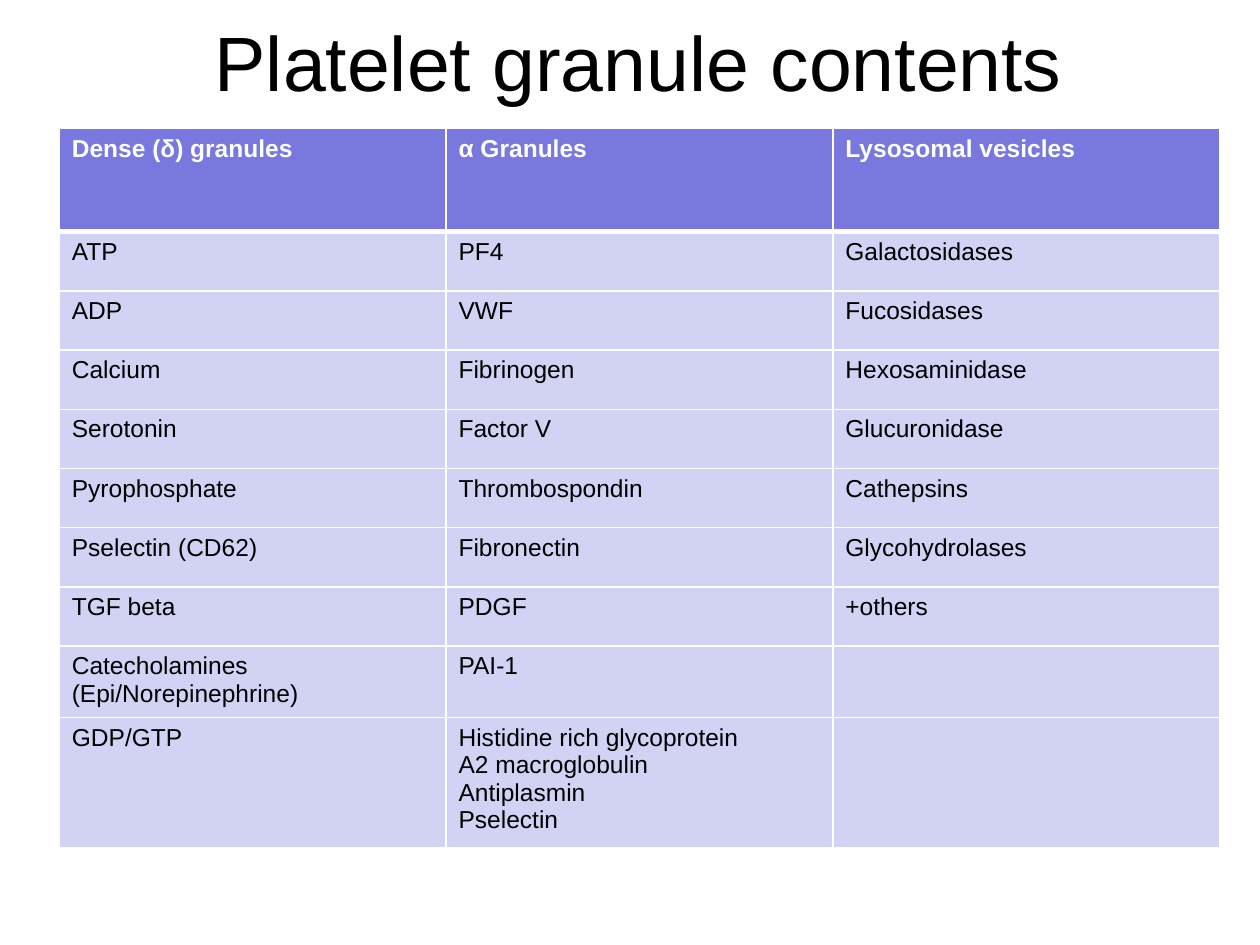
from dataclasses import dataclass

from lxml import etree
from pptx import Presentation
from pptx import util as u
from pptx.dml.color import RGBColor
from pptx.enum import text
from pptx.oxml import ns


@dataclass(frozen=True)
class Theme:
    font: str = "Arial"
    title_size: int = 44
    table_size: int = 14
    ink: str = "000000"
    white: str = "FFFFFF"
    header_fill: str = "7878DE"
    body_fill: str = "D2D2F4"
    thin: int = 1
    thick: int = 3


HEADERS = ["Dense (δ) granules", "α Granules", "Lysosomal vesicles"]
CONTENTS = [
    ["ATP", "PF4", "Galactosidases"],
    ["ADP", "VWF", "Fucosidases"],
    ["Calcium", "Fibrinogen", "Hexosaminidase"],
    ["Serotonin", "Factor V", "Glucuronidase"],
    ["Pyrophosphate", "Thrombospondin", "Cathepsins"],
    ["Pselectin (CD62)", "Fibronectin", "Glycohydrolases"],
    ["TGF beta", "PDGF", "+others"],
    ["Catecholamines (Epi/Norepinephrine)", "PAI-1", ""],
    ["GDP/GTP",
     "Histidine rich glycoprotein\nΑ2 macroglobulin\nAntiplasmin\nPselectin", ""],
]


class SlideBuilder:
    def __init__(self, slide, theme):
        self.slide = slide
        self.theme = theme

    def add_lines(self, frame, content, size, color, bold=False, align=None):
        """Fill a text frame, one paragraph for each line of content."""
        for index, line in enumerate(content.split("\n")):
            paragraph = frame.add_paragraph() if index else frame.paragraphs[0]
            paragraph.alignment = align
            paragraph.font.size = u.Pt(size)
            if not line:
                continue
            run = paragraph.add_run()
            run.text = line
            run.font.name = self.theme.font
            run.font.size = u.Pt(size)
            run.font.bold = bold
            run.font.color.rgb = RGBColor.from_string(color)

    def title(self, content, left, top, width, height):
        box = self.slide.shapes.add_textbox(
            u.Inches(left), u.Inches(top), u.Inches(width), u.Inches(height))
        frame = box.text_frame
        frame.word_wrap = True
        frame.vertical_anchor = text.MSO_ANCHOR.MIDDLE
        self.add_lines(frame, content, self.theme.title_size, self.theme.ink,
                       align=text.PP_ALIGN.CENTER)

    def borders(self, cell, top, bottom):
        """Draw white cell borders; they must precede the fill in the XML."""
        properties = cell._tc.get_or_add_tcPr()
        widths = {"lnL": self.theme.thin, "lnR": self.theme.thin,
                  "lnT": top, "lnB": bottom}
        for position, (side, width) in enumerate(widths.items()):
            line = etree.Element(ns.qn(f"a:{side}"), w=str(u.Pt(width)))
            fill = etree.SubElement(line, ns.qn("a:solidFill"))
            etree.SubElement(fill, ns.qn("a:srgbClr"), val=self.theme.white)
            properties.insert(position, line)

    def table(self, rows, left, top, column_width, header_height, row_height):
        theme = self.theme
        columns = len(rows[0])
        height = header_height + row_height * (len(rows) - 1)
        table = self.slide.shapes.add_table(
            len(rows), columns, u.Inches(left), u.Inches(top),
            u.Inches(column_width * columns), u.Inches(height)).table
        for column in table.columns:
            column.width = u.Inches(column_width)
        for index, values in enumerate(rows):
            header = index == 0
            table.rows[index].height = u.Inches(header_height if header else row_height)
            for column, content in enumerate(values):
                cell = table.cell(index, column)
                cell.fill.solid()
                cell.fill.fore_color.rgb = RGBColor.from_string(
                    theme.header_fill if header else theme.body_fill)
                self.borders(cell, theme.thick if index == 1 else theme.thin,
                             theme.thick if header else theme.thin)
                self.add_lines(cell.text_frame, content, theme.table_size,
                               theme.white if header else theme.ink, bold=header)


def main():
    presentation = Presentation()
    presentation.slide_width = u.Inches(10)
    presentation.slide_height = u.Inches(7.5)
    slide = presentation.slides.add_slide(presentation.slide_layouts[6])
    builder = SlideBuilder(slide, Theme())
    builder.title("Platelet granule contents", 0.82, -0.14, 8.5, 1.25)
    builder.table([HEADERS, *CONTENTS], left=0.47, top=1.02, column_width=3.07,
                  header_height=0.82, row_height=0.47)
    presentation.save("out.pptx")


if __name__ == "__main__":
    main()
